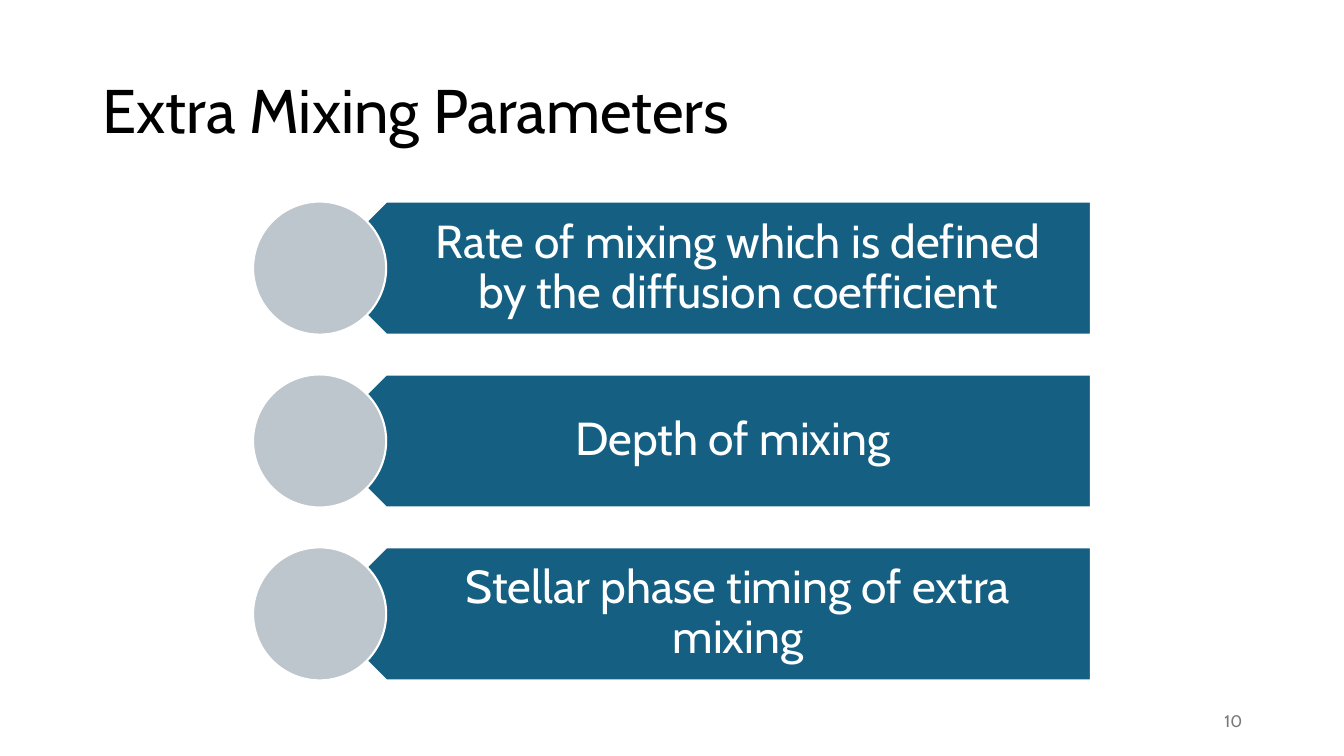
"""Build the slide on extra mixing parameters, with three labelled arrow bars."""
from pptx import Presentation
from pptx.dml.color import RGBColor
from pptx.enum.shapes import MSO_SHAPE
from pptx.enum.text import MSO_ANCHOR, PP_ALIGN
from pptx.util import Inches, Pt


def add_text(box, text, size, color, align, spacing=1.0, insets=(0.1, 0.05, 0.1, 0.05)):
    left, top, width, height = (Inches(value) for value in box)
    frame = slide.shapes.add_textbox(left, top, width, height).text_frame
    frame.word_wrap = True
    frame.vertical_anchor = MSO_ANCHOR.MIDDLE
    frame.margin_left, frame.margin_top, frame.margin_right, frame.margin_bottom = (
        Inches(value) for value in insets)
    paragraph = frame.paragraphs[0]
    paragraph.alignment = align
    paragraph.line_spacing = spacing
    run = paragraph.add_run()
    run.text = text
    run.font.name = "Cabin"
    run.font.size = Pt(size)
    run.font.color.rgb = RGBColor.from_string(color)


def add_outlined(kind, left, top, width, height, fill):
    shape = slide.shapes.add_shape(kind, Inches(left), Inches(top), Inches(width), Inches(height))
    shape.shadow.inherit = False
    shape.fill.solid()
    shape.fill.fore_color.rgb = RGBColor.from_string(fill)
    shape.line.color.rgb = RGBColor.from_string("FFFFFF")
    shape.line.width = Pt(1.5)
    return shape


presentation = Presentation()
presentation.slide_width = Inches(13.33)
presentation.slide_height = Inches(7.5)
slide = presentation.slides.add_slide(presentation.slide_layouts[6])

add_text((0.92, 0.4, 11.5, 1.45), "Extra Mixing Parameters", 44, "000000", PP_ALIGN.LEFT, 0.9)

parameters = [
    "Rate of mixing which is defined by the diffusion coefficient",
    "Depth of mixing ",
    "Stellar phase timing of extra mixing",
]
first_top, last_top, bar_height = 2, 5.43, 1.32
row_step = (last_top - first_top) / (len(parameters) - 1)

for row, parameter in enumerate(parameters):
    top = first_top + row * row_step
    bar = add_outlined(MSO_SHAPE.PENTAGON, 3.17, top, 7.65, bar_height, "156082")
    bar.rotation = 180
    add_text((3.5, top, 7.32, bar_height), parameter, 33, "FFFFFF", PP_ALIGN.CENTER, 0.9,
             (0.58, 0.14, 0.26, 0.14))
    add_outlined(MSO_SHAPE.OVAL, 2.51, top, bar_height, bar_height, "BDC5CD")

add_text((9.42, 6.95, 3, 0.4), "10", 12, "797979", PP_ALIGN.RIGHT)

presentation.save("out.pptx")
